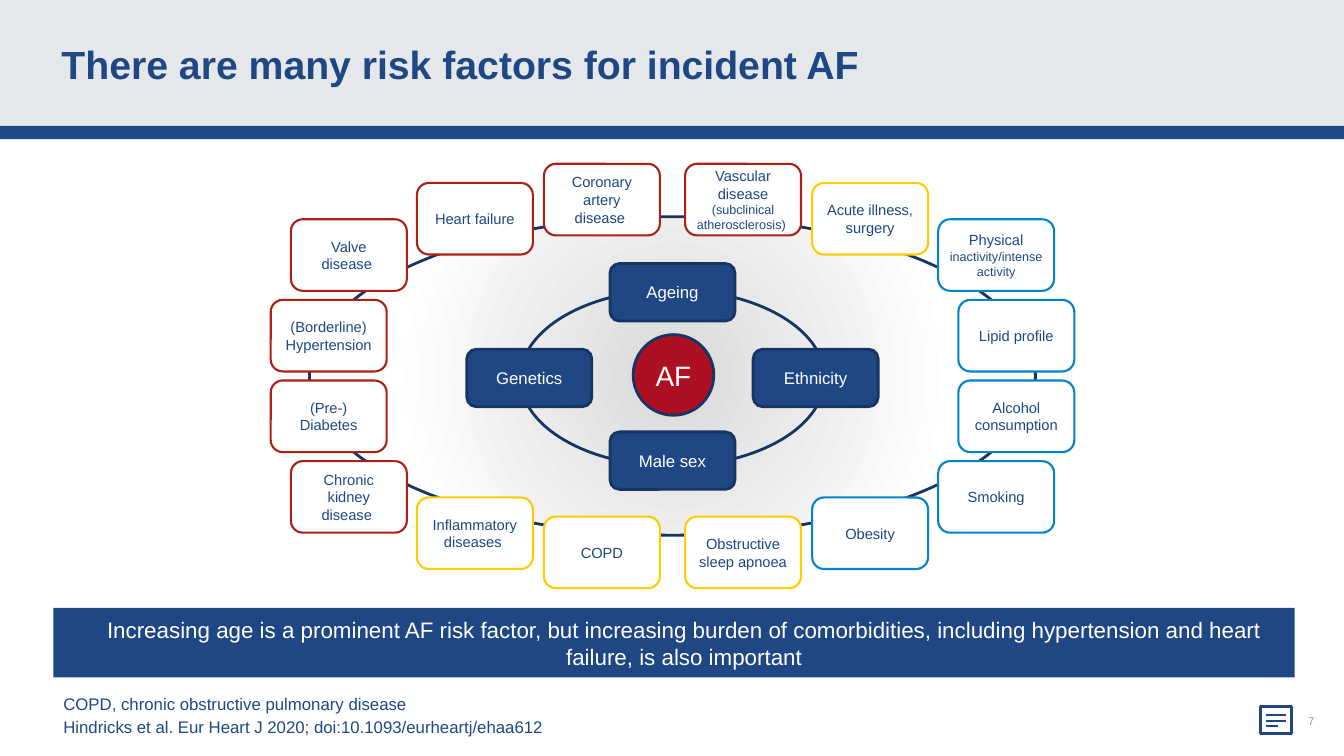
from lxml import etree
from pptx import Presentation
from pptx.dml.color import RGBColor
from pptx.enum import shapes, text
from pptx.oxml.ns import qn
from pptx.util import Inches, Pt

NAVY = RGBColor(0x1E, 0x47, 0x84)
DARK_NAVY = RGBColor(0x17, 0x35, 0x63)
RED = RGBColor(0xAC, 0x21, 0x17)
CRIMSON = RGBColor(0xAE, 0x10, 0x23)
YELLOW = RGBColor(0xFF, 0xCC, 0x00)
BLUE = RGBColor(0x00, 0x84, 0xCB)
PALE_GREY = RGBColor(0xE5, 0xE8, 0xEA)
MID_GREY = RGBColor(0xD9, 0xD9, 0xD9)
PAGE_GREY = RGBColor(0x8D, 0x95, 0xAE)
WHITE = RGBColor(0xFF, 0xFF, 0xFF)

# Content: a block of text is a list of paragraphs, each a list of (wording, size)
TITLE = "There are many risk factors for incident AF"
MESSAGE = ("Increasing age is a prominent AF risk factor, but increasing burden of "
           "comorbidities, including hypertension and heart failure, is also important")
NOTES = ["COPD, chronic obstructive pulmonary disease",
         "Hindricks et al. Eur Heart J 2020; doi:10.1093/eurheartj/ehaa612"]
CORE_FACTORS = ["Ageing", "Ethnicity", "Male sex", "Genetics"]
BODY, DETAIL = 10.5, 9
OUTER_FACTORS = [  # clockwise from the top
    (RED, [[("Vascular disease ", BODY), ("(subclinical atherosclerosis) ", DETAIL)]]),
    (YELLOW, [[("Acute illness, surgery", BODY)]]),
    (BLUE, [[("Physical", BODY)], [("inactivity/intense activity", DETAIL)]]),
    (BLUE, [[("Lipid profile", BODY)]]),
    (BLUE, [[("Alcohol consumption", BODY)]]),
    (BLUE, [[("Smoking", BODY)]]),
    (BLUE, [[("Obesity", BODY)]]),
    (YELLOW, [[("Obstructive sleep apnoea", BODY)]]),
    (YELLOW, [[("COPD", BODY)]]),
    (YELLOW, [[("Inflammatory diseases ", BODY)]]),
    (RED, [[("Chronic kidney disease ", BODY)]]),
    (RED, [[("(Pre-) Diabetes", BODY)]]),
    (RED, [[("(Borderline) Hypertension", BODY)]]),
    (RED, [[("Valve disease ", BODY)]]),
    (RED, [[("Heart failure", BODY)]]),
    (RED, [[("Coronary artery disease ", BODY)]]),
]

# Layout, in inches
WIDTH, HEIGHT = 13.33, 7.5
CENTRE_X, CENTRE_Y = 6.67, 3.73
QUARTER = [(0.7, 1.75), (1.96, 1.56), (3.21, 1.2), (3.41, 0.4)]
OUTER_OFFSETS = ([(x, -y) for x, y in QUARTER]
                 + [(x, y) for x, y in reversed(QUARTER)]
                 + [(-x, y) for x, y in QUARTER]
                 + [(-x, -y) for x, y in reversed(QUARTER)])
CORE_OFFSETS = [(0, -0.83), (1.42, 0.02), (0, 0.84), (-1.42, 0.02)]

deck = Presentation()
deck.slide_width, deck.slide_height = Inches(WIDTH), Inches(HEIGHT)
page = deck.slides.add_slide(deck.slide_layouts[5])


def write(frame, paragraphs, colour, align=text.PP_ALIGN.CENTER,
          anchor=text.MSO_ANCHOR.MIDDLE, bold=False):
    frame.word_wrap = True
    frame.auto_size = text.MSO_AUTO_SIZE.NONE
    frame.vertical_anchor = anchor
    for index, spans in enumerate(paragraphs):
        para = frame.add_paragraph() if index else frame.paragraphs[0]
        para.alignment = align
        for wording, size in spans:
            span = para.add_run()
            span.text = wording
            span.font.name, span.font.size = "Arial", Pt(size)
            span.font.bold, span.font.color.rgb = bold, colour


def add_box(kind, left, top, width, height, fill=None, line=None, weight=2):
    box = page.shapes.add_shape(kind, *map(Inches, (left, top, width, height)))
    box.shadow.inherit = False
    if fill is None:
        box.fill.background()
    else:
        box.fill.solid()
        box.fill.fore_color.rgb = fill
    if line is None:
        box.line.fill.background()
    else:
        box.line.color.rgb, box.line.width = line, Pt(weight)
    return box


def add_centred(kind, offset, size, **style):
    left = CENTRE_X + offset[0] - size[0] / 2
    top = CENTRE_Y + offset[1] - size[1] / 2
    return add_box(kind, left, top, *size, **style)


def add_text(left, top, width, height):
    return page.shapes.add_textbox(*map(Inches, (left, top, width, height))).text_frame


RECT, ROUND, OVAL = (shapes.MSO_SHAPE.RECTANGLE, shapes.MSO_SHAPE.ROUNDED_RECTANGLE,
                     shapes.MSO_SHAPE.OVAL)

# Header band and title
bands = [add_box(RECT, 0, 0, WIDTH, 1.26, PALE_GREY),
         add_box(RECT, 0, 1.25, WIDTH, 0.13, NAVY)]
title = page.shapes.title
title.left, title.top, title.width, title.height = map(Inches, (0.51, 0, 12.31, 1.26))
write(title.text_frame, [[(TITLE, 28)]], NAVY, text.PP_ALIGN.LEFT, bold=True)
for band in reversed(bands):
    page.shapes._spTree.insert(2, band._element)

# Outer ring with a radial glow
ring = add_centred(OVAL, (0, 0), (7.2, 3.16), line=DARK_NAVY)
ring.fill.gradient()
for stop, position, colour in zip(ring.fill.gradient_stops, (0, 0.71), (MID_GREY, WHITE)):
    stop.position, stop.color.rgb = position, colour
gradient = ring._element.spPr.find(qn("a:gradFill"))
gradient.remove(gradient.find(qn("a:lin")))
radial = etree.SubElement(gradient, qn("a:path"), {"path": "circle"})
etree.SubElement(radial, qn("a:fillToRect"), dict.fromkeys("ltrb", "50000"))

# Outer risk factors
for (colour, wording), offset in zip(OUTER_FACTORS, OUTER_OFFSETS):
    box = add_centred(ROUND, offset, (1.15, 0.71), fill=WHITE, line=colour, weight=1.5)
    if wording[-1][-1][1] == DETAIL:
        box.text_frame.margin_left = box.text_frame.margin_right = Inches(0.08)
    write(box.text_frame, wording, NAVY)

# Inner ring, core factors and hub
add_centred(OVAL, (0, 0.02), (3.02, 1.75), line=DARK_NAVY)
for name, offset in zip(CORE_FACTORS, CORE_OFFSETS):
    box = add_centred(ROUND, offset, (1.24, 0.57), fill=NAVY, line=DARK_NAVY)
    write(box.text_frame, [[(name, 12)]], WHITE)
hub = add_centred(OVAL, (0.01, -0.01), (0.8, 0.8), fill=CRIMSON, line=DARK_NAVY)
write(hub.text_frame, [[("AF", 20)]], WHITE)

# Key message
message = add_box(RECT, 0.53, 6.03, 12.31, 0.69, NAVY)
write(message.text_frame, [[(MESSAGE, 16)]], WHITE)
para = message.text_frame.paragraphs[0]
para.space_before = para.space_after = Pt(6)
para._p.get_or_add_pPr().set("marL", str(Inches(0.2)))

# Footnotes and page number
notes = add_text(0.53, 6.81, 12.14, 0.55)
write(notes, [[(note, 12)] for note in NOTES], NAVY, text.PP_ALIGN.LEFT,
      text.MSO_ANCHOR.BOTTOM)
for para in notes.paragraphs:
    para.space_before = Pt(2.4)
write(add_text(12.67, 6.95, 0.67, 0.4), [[("7", 8)]], PAGE_GREY)

# Notes icon
add_box(RECT, 12.5, 7.01, 0.31, 0.27, WHITE, NAVY, 2.25)
for y, end in [(7.09, 12.75), (7.15, 12.75), (7.2, 12.68)]:
    stroke = page.shapes.add_connector(shapes.MSO_CONNECTOR.STRAIGHT,
                                       *map(Inches, (12.56, y, end, y)))
    stroke.line.color.rgb, stroke.line.width = NAVY, Pt(1.5)
    etree.SubElement(stroke._element.spPr, qn("a:effectLst"))

deck.save("out.pptx")
